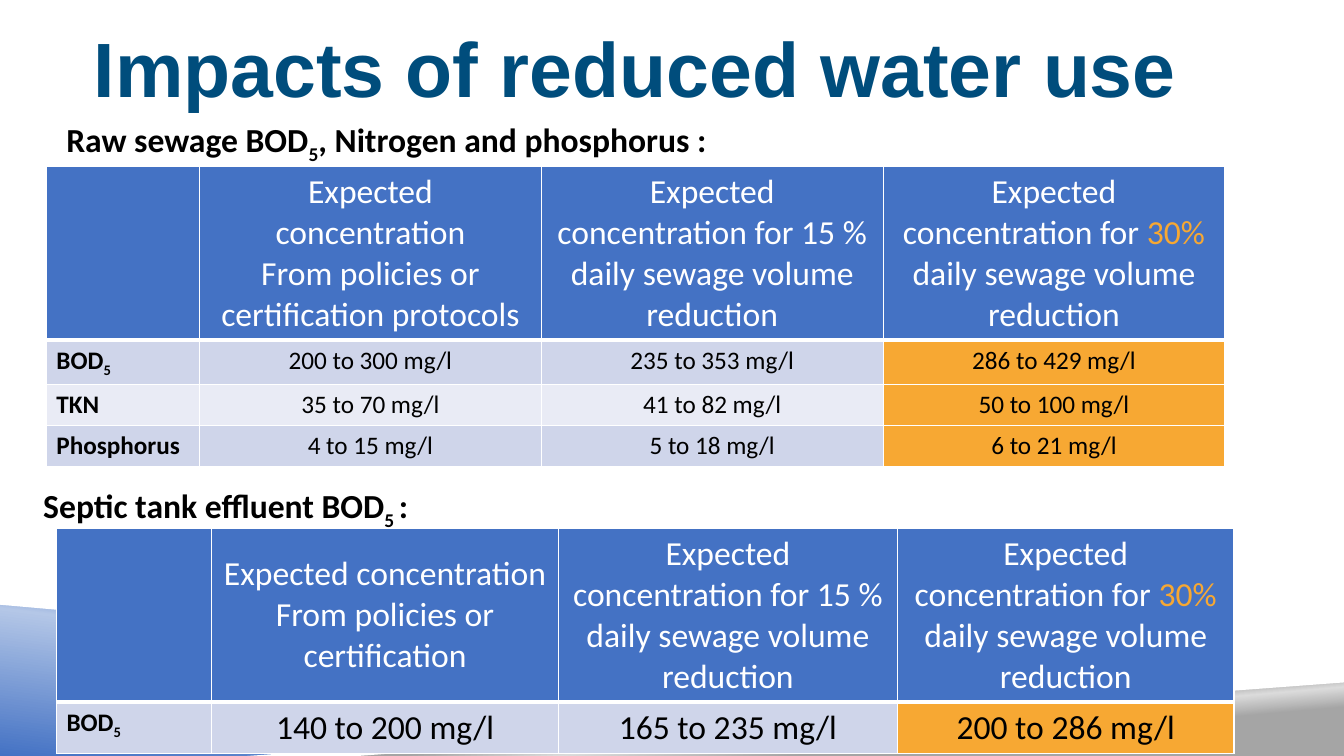
from copy import deepcopy

from lxml.etree import SubElement
from pptx import Presentation
from pptx.dml.color import RGBColor
from pptx.enum.text import MSO_ANCHOR, PP_ALIGN
from pptx.oxml.ns import qn
from pptx.util import Inches, Pt

WIDTH, HEIGHT = Inches(13.33), Inches(7.5)
BLUE, PALE, PALER, ORANGE, WHITE, BLACK = "4472C4", "CFD5EA", "E9EBF5", "F7A833", "FFFFFF", "000000"
HEADER = {"name": "Calibri", "size": Pt(24), "bold": False, "color": WHITE}
HEADING = {**HEADER, "bold": True, "color": BLACK}
LABEL = {**HEADING, "size": Pt(18)}
VALUE = {**LABEL, "bold": False}
LARGE_VALUE = {**VALUE, "size": Pt(24)}
TITLE = {"name": "Arial", "size": Pt(55), "bold": True, "color": "004D7C"}
SUBSCRIPT = {"baseline": -25000}
BOD = [("BOD", {}), ("5", SUBSCRIPT)]
REDUCTIONS = [
    [[("Expected concentration for 15 % daily sewage volume reduction", {})]],
    [[("Expected concentration for ", {}), ("30%", {"color": ORANGE}),
      (" daily sewage volume reduction", {})]],
]


def paint(hex_text):
    """Turn a hex string into a colour."""
    return RGBColor.from_string(hex_text)


def across(share):
    """Measure a percentage of the slide width."""
    return round(WIDTH * share / 100)


def down(share):
    """Measure a percentage of the slide height."""
    return round(HEIGHT * share / 100)


def place(box, left, top, width, height):
    """Position a box by percentages of the slide."""
    box.left, box.top, box.width, box.height = across(left), down(top), across(width), down(height)


def plain(text):
    """Wrap unformatted text as a list of spans."""
    return [(text, {})]


def write(frame, paragraphs, style, alignment=PP_ALIGN.LEFT, spacing=None):
    """Fill a text frame with paragraphs made of styled spans."""
    frame.word_wrap = True
    for index, spans in enumerate(paragraphs):
        para = frame.add_paragraph() if index else frame.paragraphs[0]
        para.alignment, para.line_spacing = alignment, spacing
        for text, changes in spans:
            span = para.add_run()
            span.text = text
            for key, value in {**style, **changes}.items():
                if key == "color":
                    span.font.color.rgb = paint(value)
                elif key == "baseline":
                    span.font._element.set(key, str(value))
                else:
                    setattr(span.font, key, value)


def add_band(page, points, stops, angle=0):
    """Draw a background band with a plain or gradient fill."""
    corners = [(across(x), down(y)) for x, y in points]
    builder = page.shapes.build_freeform(*corners[0], scale=1.0)
    builder.add_line_segments(corners[1:], close=True)
    band = builder.convert_to_shape()
    band.shadow.inherit = False
    band.line.fill.background()
    if len(stops) == 1:
        band.fill.solid()
        band.fill.fore_color.rgb = paint(stops[0][1])
        return
    band.fill.gradient()
    band.fill.gradient_angle = angle
    stop_list = band._element.spPr.find(qn("a:gradFill")).find(qn("a:gsLst"))
    stop_list.append(deepcopy(stop_list[0]))
    for stop, (position, color) in zip(band.fill.gradient_stops, stops):
        stop.position = position
        stop.color.rgb = paint(color)


def add_heading(page, left, top, spans):
    """Add the bold line above a table."""
    box = page.shapes.add_textbox(0, 0, 0, 0)
    place(box, left, top, 66.6, 6.67)
    write(box.text_frame, [spans], HEADING, spacing=0.9)


def format_cell(cell, fill, bottom):
    """Give a cell white borders and a solid fill."""
    properties = cell._tc.get_or_add_tcPr()
    for side, points in (("L", 1), ("R", 1), ("T", 1), ("B", bottom)):
        line = SubElement(properties, qn(f"a:ln{side}"), w=str(Pt(points)))
        solid = SubElement(line, qn("a:solidFill"))
        SubElement(solid, qn("a:srgbClr"), val=WHITE)
    cell.fill.solid()
    cell.fill.fore_color.rgb = paint(fill)


def add_concentrations(page, left, top, columns, rows, policies, records, value_style):
    """Add a table of expected concentrations."""
    frame = page.shapes.add_table(len(rows), len(columns), across(left), down(top),
                                  across(sum(columns)), down(sum(rows)))
    table = frame.table
    for column, width in zip(table.columns, columns):
        column.width = across(width)
    for row, height in zip(table.rows, rows):
        row.height = down(height)
    headers = [[], [plain("Expected concentration"), plain(policies)], *REDUCTIONS]
    for index, paragraphs in enumerate(headers):
        cell = table.cell(0, index)
        format_cell(cell, BLUE, 3)
        cell.vertical_anchor = MSO_ANCHOR.MIDDLE
        write(cell.text_frame, paragraphs, HEADER, PP_ALIGN.CENTER)
    for row, (label, *values) in enumerate(records, 1):
        for index, spans in enumerate([label, *map(plain, values)]):
            cell = table.cell(row, index)
            band = PALE if row % 2 else PALER
            format_cell(cell, ORANGE if index == len(values) else band, 1)
            style, alignment = (value_style, PP_ALIGN.CENTER) if index else (LABEL, PP_ALIGN.LEFT)
            write(cell.text_frame, [spans], style, alignment)


def main():
    """Build and save the slide."""
    deck = Presentation()
    deck.slide_width, deck.slide_height = WIDTH, HEIGHT
    page = deck.slides.add_slide(deck.slide_layouts[5])
    add_band(page, [(0, 79.6), (79.2, 92.27), (20, 100), (0, 100)],
             [(0, BLUE), (0.52, "B4C7E7"), (0.66, BLUE)], 83)
    add_band(page, [(19.8, 100), (100, 89.6), (100, 100)],
             [(0.28, "A5A5A5"), (0.4, "DBDBDB"), (0.48, "A5A5A5")], 95)
    add_band(page, [(0, 78.93), (0, 80), (79.1, 92.4), (83.2, 92)], [(0, WHITE)])
    add_band(page, [(100, 89.2), (18.4, 100), (26.6, 100), (100, 90.27)], [(0, WHITE)])

    title = page.shapes.title
    place(title, 6.23, 0, 86.27, 19.33)
    title.text_frame.vertical_anchor = MSO_ANCHOR.MIDDLE
    write(title.text_frame, [plain("Impacts of reduced water use")], TITLE, spacing=0.9)

    add_heading(page, 4.2, 15.2, [("Raw sewage BOD", {}), ("5", SUBSCRIPT),
                                  (", Nitrogen and phosphorus :", {})])
    add_concentrations(
        page, 3.45, 22, [11.4, 25.43, 25.43, 25.43], [23, 5.8, 5.4, 5.4],
        "From policies or certification protocols",
        [(BOD, "200 to 300 mg/l", "235 to 353 mg/l", "286 to 429 mg/l"),
         (plain("TKN"), "35 to 70 mg/l", "41 to 82 mg/l", "50 to 100 mg/l"),
         (plain("Phosphorus"), "4 to 15 mg/l", "5 to 18 mg/l", "6 to 21 mg/l")], VALUE)

    add_heading(page, 2.48, 63.6, [("Septic tank effluent BOD", {}), ("5 ", SUBSCRIPT), (":", {})])
    add_concentrations(
        page, 4.2, 69.87, [11.55, 25.81, 25.21, 25.06], [23, 6.8],
        "From policies or certification",
        [(BOD, "140 to 200 mg/l", "165 to 235 mg/l", "200 to 286 mg/l")], LARGE_VALUE)
    deck.save("out.pptx")


if __name__ == "__main__":
    main()
